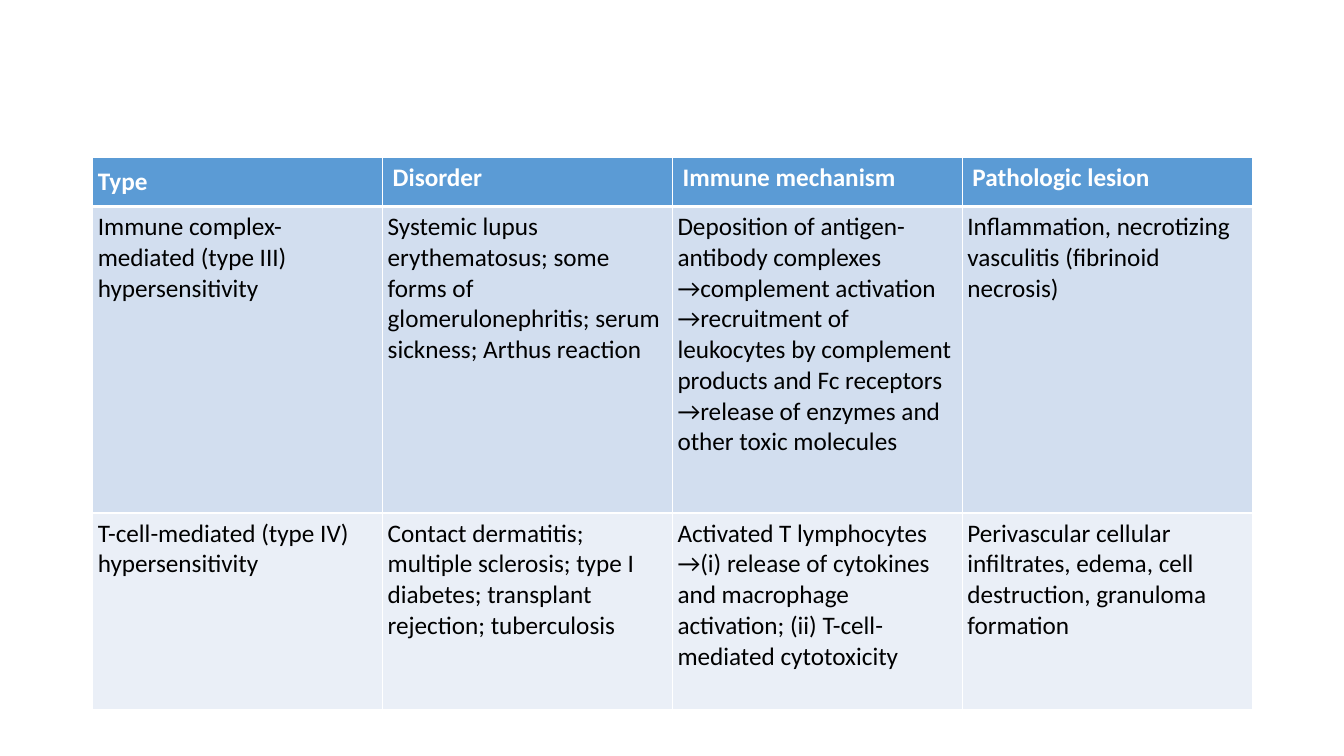
"""Build a slide with a table of hypersensitivity disorders."""
import pptx
import pptx.util
import pptx.dml.color
import pptx.enum.text
import lxml.etree

Inches = pptx.util.Inches
Pt = pptx.util.Pt
RGBColor = pptx.dml.color.RGBColor
Anchor = pptx.enum.text.MSO_ANCHOR

WHITE = RGBColor(0xFF, 0xFF, 0xFF)
BLACK = RGBColor(0x00, 0x00, 0x00)
FILLS = [
    RGBColor(0x5B, 0x9B, 0xD5),
    RGBColor(0xD2, 0xDE, 0xEF),
    RGBColor(0xEA, 0xEF, 0xF7),
]
HEIGHTS = [0.49, 3.04, 1.95]
NS = "{http://schemas.openxmlformats.org/drawingml/2006/main}"

ROWS = [
    ["Type", "Disorder", "Immune mechanism", "Pathologic lesion"],
    [
        "Immune complex-mediated (type III) hypersensitivity",
        "Systemic lupus erythematosus; some forms of glomerulonephritis; "
        "serum sickness; Arthus reaction",
        "Deposition of antigen-antibody complexes →complement activation "
        "→recruitment of leukocytes by complement products and Fc receptors "
        "→release of enzymes and other toxic molecules",
        "Inflammation, necrotizing vasculitis (fibrinoid necrosis)",
    ],
    [
        "T-cell-mediated (type IV) hypersensitivity",
        "Contact dermatitis; multiple sclerosis; type I diabetes; "
        "transplant rejection; tuberculosis",
        "Activated T lymphocytes →(i) release of cytokines and macrophage "
        "activation; (ii) T-cell-mediated cytotoxicity",
        "Perivascular cellular infiltrates, edema, cell destruction, "
        "granuloma formation",
    ],
]


def edge(cell, side, width):
    """Draw one white border of a cell."""
    props = cell._tc.get_or_add_tcPr()
    line = lxml.etree.SubElement(props, NS + "ln" + side, w=str(Pt(width)))
    fill = lxml.etree.SubElement(line, NS + "solidFill")
    lxml.etree.SubElement(fill, NS + "srgbClr", val=str(WHITE))


deck = pptx.Presentation()
deck.slide_width = Inches(13.33)
deck.slide_height = Inches(7.5)
slide = deck.slides.add_slide(deck.slide_layouts[6])

frame = slide.shapes.add_table(
    3, 4, Inches(0.92), Inches(1.56), Inches(11.5), Inches(sum(HEIGHTS)))
table = frame.table
for col in table.columns:
    col.width = Inches(11.5 / 4)

for i, texts in enumerate(ROWS):
    head = i == 0
    table.rows[i].height = Inches(HEIGHTS[i])
    for j, text in enumerate(texts):
        cell = table.cell(i, j)
        edge(cell, "L", 1)
        edge(cell, "R", 1)
        edge(cell, "T", 3 if i == 1 else 1)
        edge(cell, "B", 3 if head else 1)
        cell.fill.solid()
        cell.fill.fore_color.rgb = FILLS[i]
        if not head or j == 0:
            cell.margin_left = cell.margin_right = Inches(0.05)
            cell.margin_top = cell.margin_bottom = Inches(0.05)
        cell.vertical_anchor = Anchor.MIDDLE if head and j == 0 else Anchor.TOP
        run = cell.text_frame.paragraphs[0].add_run()
        run.text = text
        run.font.name = "Calibri"
        run.font.size = Pt(18)
        run.font.bold = head
        run.font.color.rgb = WHITE if head else BLACK

deck.save("out.pptx")
